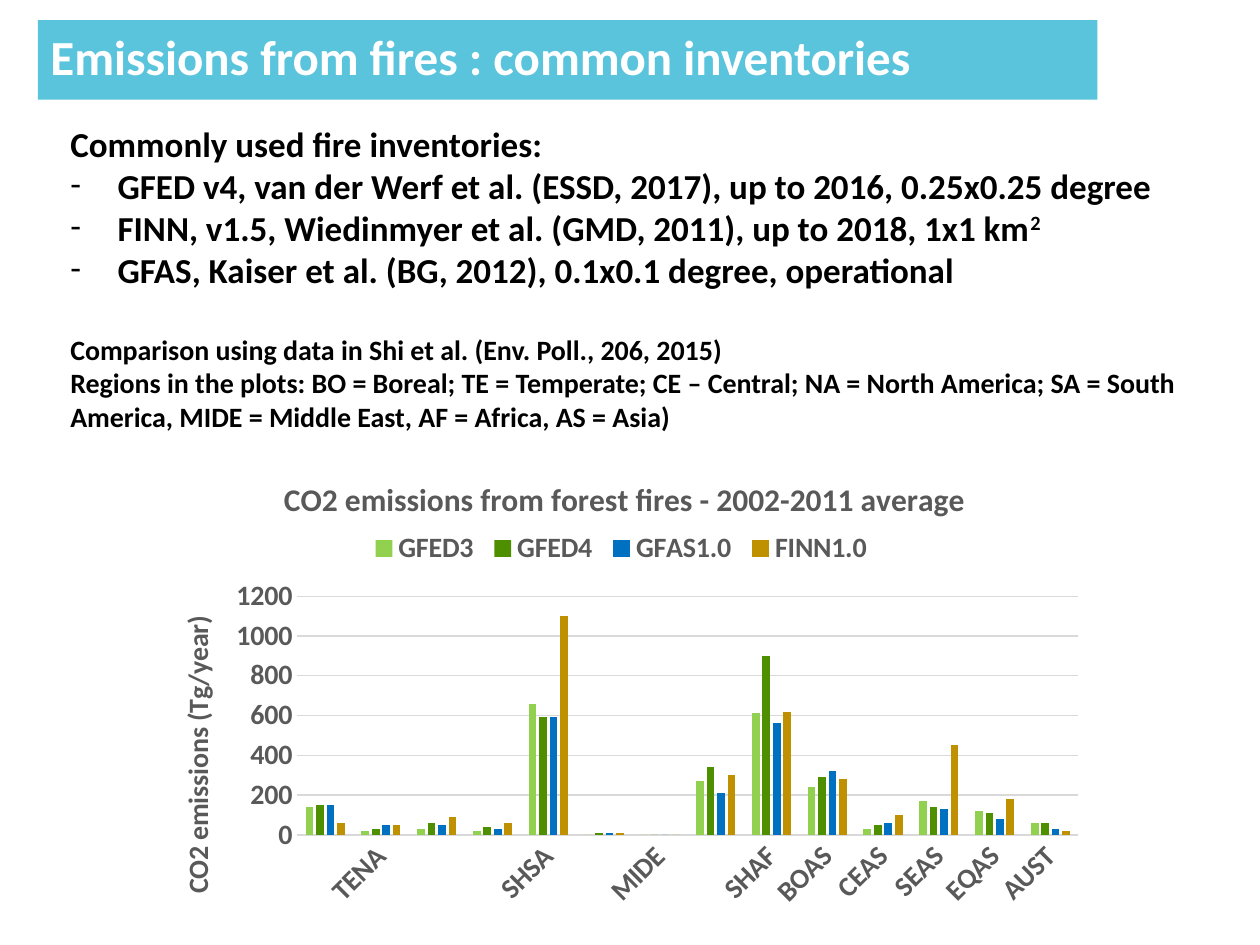
from pptx import Presentation
from pptx.chart.data import CategoryChartData
from pptx.dml.color import RGBColor
from pptx.enum.chart import XL_CHART_TYPE, XL_LEGEND_POSITION, XL_TICK_MARK
from pptx.enum.text import MSO_ANCHOR, MSO_AUTO_SIZE, PP_ALIGN
from pptx.oxml.ns import qn
from pptx.util import Pt
from lxml import etree

COLUMNS = XL_CHART_TYPE.COLUMN_CLUSTERED
LEGEND_TOP = XL_LEGEND_POSITION.TOP
NO_TICK = XL_TICK_MARK.NONE
MIDDLE, TOP = MSO_ANCHOR.MIDDLE, MSO_ANCHOR.TOP
LEFT = PP_ALIGN.LEFT
NO_FIT = MSO_AUTO_SIZE.NONE

# Content
TITLE = "Emissions from fires : common inventories"
HEADING = "Commonly used fire inventories:"
INVENTORIES = [  # text, superscript
    ("GFED v4, van der Werf et al. (ESSD, 2017), up to 2016, 0.25x0.25 degree", ""),
    ("FINN, v1.5, Wiedinmyer et al. (GMD, 2011), up to 2018, 1x1 km", "2"),
    ("GFAS, Kaiser et al. (BG, 2012), 0.1x0.1 degree, operational", ""),
]
NOTES = [
    "Comparison using data in Shi et al. (Env. Poll., 206, 2015)",
    "Regions in the plots: BO = Boreal; TE = Temperate; CE – Central; "
    "NA = North America; SA = South America, MIDE = Middle East, AF = Africa, AS = Asia)",
]
CHART_TITLE = "CO2 emissions from forest fires - 2002-2011 average"
AXIS_TITLE = "CO2 emissions (Tg/year)"
REGIONS = ["BONA", "TENA", "CEAM", "NHSA", "SHSA", "EURO", "MIDE",
           "NHAF", "SHAF", "BOAS", "CEAS", "SEAS", "EQAS", "AUST"]
SERIES = [  # name, colour, values
    ("GFED3", "92D050", (140, 20, 30, 20, 660, 0, 0, 270, 610, 240, 30, 170, 120, 60)),
    ("GFED4", "4E8F00", (150, 30, 60, 40, 590, 10, 0, 340, 900, 290, 50, 140, 110, 60)),
    ("GFAS1.0", "0070C0", (150, 50, 50, 30, 590, 10, 0, 210, 560, 320, 60, 130, 80, 30)),
    ("FINN1.0", "BF9000", (60, 50, 90, 60, 1100, 10, 0, 300, 620, 280, 100, 450, 180, 20)),
]

THEME = {
    "font": "Calibri", "banner": "5AC4DD", "white": "FFFFFF", "black": "000000",
    "grey": "595959", "grid": "D9D9D9",
    "title": 28, "body": 20, "note": 16, "chart_title": 18, "label": 16,
}

# Left, top, width, height in points
TITLE_AREA = (21.6, 11.5, 605.5, 45.4)
BODY_AREA = (33.1, 66.2, 650.9, 259.2)
CHART_AREA = (82.8, 253.4, 544.3, 272.9)
INDENT = 27


def color(name):
    return RGBColor.from_string(THEME.get(name, name))


def set_font(font, size, color_name):
    font.name, font.size, font.bold = THEME["font"], Pt(THEME[size]), True
    font.color.rgb = color(color_name)


def set_fill(shape, color_name):
    shape.fill.solid()
    shape.fill.fore_color.rgb = color(color_name)


def add_dash(para):
    properties = para._p.get_or_add_pPr()
    properties.set("marL", str(Pt(INDENT)))
    properties.set("indent", str(-Pt(INDENT)))
    etree.SubElement(properties, qn("a:buFont")).set("typeface", THEME["font"])
    etree.SubElement(properties, qn("a:buChar")).set("char", "-")


def set_layout(element, index, inner=False, **fractions):
    """Place a chart part by fractions of the chart area."""
    for old in element.findall(qn("c:layout")):
        element.remove(old)
    layout = etree.Element(qn("c:layout"))
    element.insert(index, layout)
    manual = etree.SubElement(layout, qn("c:manualLayout"))
    settings = [("layoutTarget", "inner")] if inner else []
    settings += [("xMode", "edge"), ("yMode", "edge"), *fractions.items()]
    for tag, value in settings:
        etree.SubElement(manual, qn("c:" + tag)).set("val", str(value))


def rotate(element, degrees):
    body = next(element.iter(qn("a:bodyPr")))
    body.set("rot", str(degrees * 60000))
    body.set("vert", "horz")


def set_chart_text(title, text, size):
    frame = title.text_frame
    frame.text = text
    set_font(frame.paragraphs[0].font, size, "grey")


def add_title(page):
    title = page.shapes.title
    title.left, title.top, title.width, title.height = map(Pt, TITLE_AREA)
    set_fill(title, "banner")
    frame = title.text_frame
    frame.text = TITLE
    frame.auto_size, frame.vertical_anchor = NO_FIT, MIDDLE
    para = frame.paragraphs[0]
    para.alignment, para.line_spacing = LEFT, 0.9
    set_font(para.font, "title", "white")


def add_body(page):
    box = page.shapes.add_textbox(*map(Pt, BODY_AREA))
    set_fill(box, "white")
    frame = box.text_frame
    frame.word_wrap, frame.vertical_anchor = True, TOP
    heading = frame.paragraphs[0]
    heading.text = HEADING
    set_font(heading.font, "body", "black")
    for text, superscript in INVENTORIES:
        para = frame.add_paragraph()
        para.text = text
        set_font(para.font, "body", "black")
        add_dash(para)
        if superscript:
            span = para.add_run()
            span.text = superscript
            span.font._element.set("baseline", "30000")
    for number, text in enumerate(NOTES):
        para = frame.add_paragraph()
        para.text = text
        set_font(para.font, "note", "black")
        if number == 0:
            para.space_before = Pt(24)


def add_emissions_chart(page):
    data = CategoryChartData()
    data.categories = REGIONS
    for name, _, values in SERIES:
        data.add_series(name, values)
    chart = page.shapes.add_chart(COLUMNS, *map(Pt, CHART_AREA), data).chart
    set_font(chart.font, "label", "grey")

    # Columns
    plot = chart.plots[0]
    plot.gap_width, plot.overlap, plot.vary_by_categories = 219, -37, False
    for series, (_, fill, _) in zip(plot.series, SERIES):
        set_fill(series.format, fill)

    # Axes
    regions, amounts = chart.category_axis, chart.value_axis
    for axis in (regions, amounts):
        axis.major_tick_mark = axis.minor_tick_mark = NO_TICK
        set_font(axis.tick_labels.font, "label", "grey")
    rotate(regions.element if hasattr(regions, "element") else regions._element, -45)
    amounts.minimum_scale, amounts.maximum_scale, amounts.major_unit = 0, 1200, 200
    amounts.format.line.fill.background()
    for line in (regions.format.line, amounts.major_gridlines.format.line):
        line.color.rgb, line.width = color("grid"), Pt(0.75)

    # Titles and legend
    chart.has_title = True
    set_chart_text(chart.chart_title, CHART_TITLE, "chart_title")
    set_chart_text(amounts.axis_title, AXIS_TITLE, "label")
    rotate(amounts.axis_title._element, -90)
    chart.has_legend = True
    chart.legend.position, chart.legend.include_in_layout = LEGEND_TOP, False
    set_font(chart.legend.font, "label", "grey")

    # Positions inside the chart
    set_layout(chart.chart_title._element, 1, x=0.14, y=0.06)
    set_layout(amounts.axis_title._element, 1, x=0.03, y=0.35)
    set_layout(chart.legend._element, 1, x=0.23, y=0.18, w=0.54, h=0.08)
    plot_area = next(chart._chartSpace.iter(qn("c:plotArea")))
    set_layout(plot_area, 0, inner=True, x=0.16, y=0.32, w=0.82, h=0.5)


def main():
    deck = Presentation()
    deck.slide_width, deck.slide_height = Pt(720), Pt(540)
    page = deck.slides.add_slide(deck.slide_layouts[5])
    add_title(page)
    add_body(page)
    add_emissions_chart(page)
    deck.save("out.pptx")


if __name__ == "__main__":
    main()
